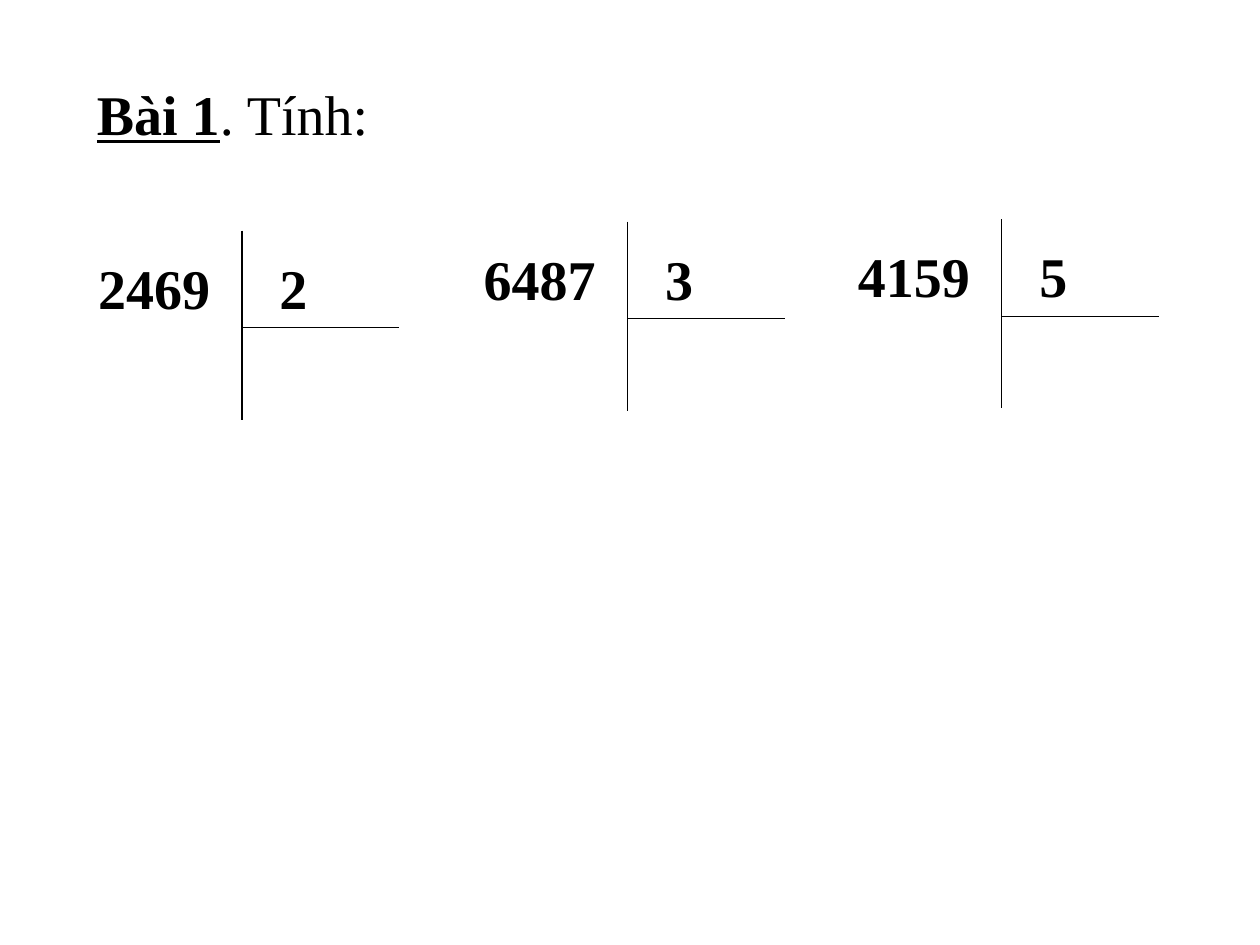
from lxml import etree
from pptx import Presentation
from pptx.dml.color import RGBColor
from pptx.enum.shapes import MSO_CONNECTOR
from pptx.enum.text import MSO_AUTO_SIZE
from pptx.oxml.ns import qn
from pptx.util import Inches, Pt

STRAIGHT = MSO_CONNECTOR.STRAIGHT
FIT_SHAPE = MSO_AUTO_SIZE.SHAPE_TO_FIT_TEXT

COLORS = {"ink": "000000"}
FONT = {"name": "Times New Roman", "size": Pt(32)}
INK = RGBColor.from_string(COLORS["ink"])

BOLD = {"bold": True}
HEADING = [("Bài 1", {"bold": True, "underline": True}), (". Tính:", {})]

# dividend, divisor, left and top of the dividend's text box
DIVISIONS = [
    ("2469", "2", 0.68, 1.96),
    ("6487", "3", 3.74, 1.89),
    ("4159", "5", 6.71, 1.87),
]
NUMBER_WIDTH, TEXT_HEIGHT = 1.23, 0.64
DIVISOR_DX = 1.44
BAR_DX, BAR_DY, BAR_HEIGHT = 1.24, -0.13, 1.5
RULE_DY, RULE_WIDTH = 0.64, 1.25


def add_text(shapes, runs, left, top, width):
    box = shapes.add_textbox(*map(Inches, (left, top, width, TEXT_HEIGHT)))
    tf = box.text_frame
    tf.word_wrap = True
    tf.auto_size = FIT_SHAPE
    p = tf.paragraphs[0]
    for text, style in runs:
        r = p.add_run()
        r.text = text
        for key, value in {**FONT, **style}.items():
            setattr(r.font, key, value)
        r.font.color.rgb = INK


def add_line(shapes, *ends):
    line = shapes.add_connector(STRAIGHT, *map(Inches, ends))
    line.line.color.rgb = INK
    line.line.width = Pt(0.75)
    etree.SubElement(line._element.spPr, qn("a:effectLst"))


def add_division(shapes, dividend, divisor, left, top):
    add_text(shapes, [(dividend, BOLD)], left, top, NUMBER_WIDTH)
    add_text(shapes, [(divisor, BOLD)], left + DIVISOR_DX, top, NUMBER_WIDTH)
    x, bar_top, rule_y = left + BAR_DX, top + BAR_DY, top + RULE_DY
    bracket = shapes.add_group_shape().shapes
    add_line(bracket, x, bar_top, x, bar_top + BAR_HEIGHT)
    add_line(bracket, x, rule_y, x + RULE_WIDTH, rule_y)


def main():
    prs = Presentation()
    prs.slide_width, prs.slide_height = Inches(10), Inches(7.5)
    s = prs.slides.add_slide(prs.slide_layouts[6])
    add_text(s.shapes, HEADING, 0.67, 0.58, 3.5)
    for division in DIVISIONS:
        add_division(s.shapes, *division)
    prs.save("out.pptx")


if __name__ == "__main__":
    main()
